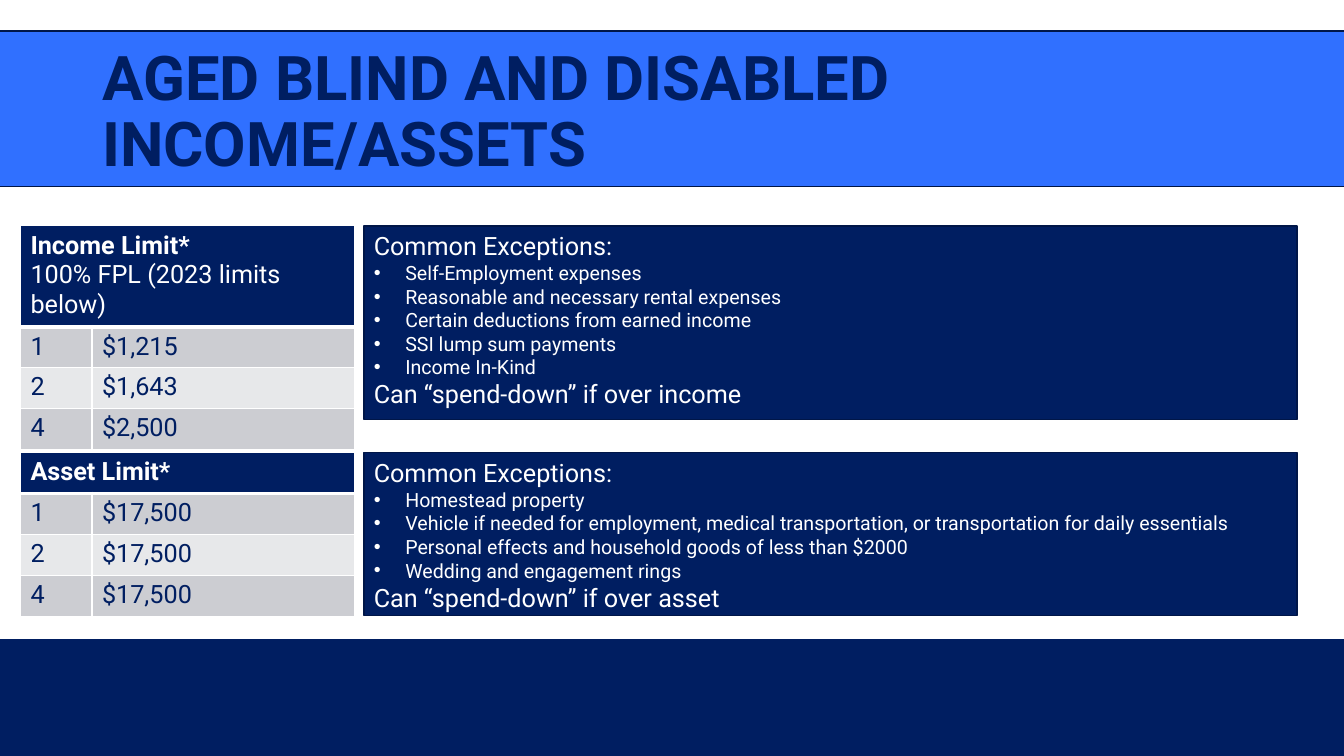
from dataclasses import dataclass
from lxml.etree import SubElement as add_element
from pptx import Presentation
from pptx.dml.color import RGBColor as Color
from pptx.enum.shapes import MSO_SHAPE as Preset
from pptx.enum.text import MSO_ANCHOR as Anchor, PP_ALIGN as Align
from pptx.oxml.ns import qn
from pptx.util import Pt


@dataclass(frozen=True)
class Theme:
    font: str = "Roboto"
    navy: str = "001E61"
    outline: str = "001648"
    blue: str = "3070FF"
    white: str = "FFFFFF"
    bands: tuple = ("CCCDD2", "E7E8EA")
    title: int = 44
    body: int = 18
    bullet: int = 14


class SlideBuilder:
    def __init__(self, page, theme):
        self.page = page
        self.theme = theme

    def add_span(self, para, text, size, color, bold=False):
        span = para.add_run()
        span.text = text
        formats = {"name": self.theme.font, "size": Pt(size), "bold": bold}
        for name, value in formats.items():
            setattr(span.font, name, value)
        span.font.color.rgb = Color.from_string(color)

    def next_para(self, frame, index):
        para = frame.add_paragraph() if index else frame.paragraphs[0]
        para.alignment = Align.LEFT
        return para

    def bar(self, bounds, fill, line=None):
        box = self.page.shapes.add_shape(Preset.RECTANGLE, *map(Pt, bounds))
        box.shadow.inherit = False
        box.fill.solid()
        box.fill.fore_color.rgb = Color.from_string(fill)
        if line:
            box.line.color.rgb = Color.from_string(line)
            box.line.width = Pt(1)
        else:
            box.line.fill.background()
        return box

    def title(self, bounds, text):
        frame = self.page.shapes.add_textbox(*map(Pt, bounds)).text_frame
        formats = {"word_wrap": True, "vertical_anchor": Anchor.MIDDLE}
        for name, value in formats.items():
            setattr(frame, name, value)
        para = self.next_para(frame, 0)
        para.line_spacing = 0.9
        self.add_span(para, text, self.theme.title, self.theme.navy, True)

    def panel(self, bounds, heading, bullets, closing):
        theme = self.theme
        frame = self.bar(bounds, theme.navy, theme.outline).text_frame
        formats = {"word_wrap": True, "vertical_anchor": Anchor.TOP}
        for name, value in formats.items():
            setattr(frame, name, value)
        for index, text in enumerate([heading, *bullets, closing]):
            para = self.next_para(frame, index)
            is_bullet = 0 < index <= len(bullets)
            if is_bullet:
                properties = para._p.get_or_add_pPr()
                properties.set("marL", str(Pt(22.5)))
                properties.set("indent", str(Pt(-22.5)))
                add_element(properties, qn("a:buFont"), typeface="Arial")
                add_element(properties, qn("a:buChar"), char="•")
            size = theme.bullet if is_bullet else theme.body
            self.add_span(para, text, size, theme.white)

    def style_cell(self, cell, fill, top=1, bottom=1):
        cell.fill.solid()
        cell.fill.fore_color.rgb = Color.from_string(fill)
        properties = cell._tc.get_or_add_tcPr()
        sides = {"lnL": 1, "lnR": 1, "lnT": top, "lnB": bottom}
        for place, (side, width) in enumerate(sides.items()):
            border = add_element(properties, qn(f"a:{side}"), w=str(Pt(width)))
            paint = add_element(border, qn("a:solidFill"))
            add_element(paint, qn("a:srgbClr"), val=self.theme.white)
            properties.insert(place, border)

    def limit_table(self, left, top, widths, heights, header, limits):
        theme = self.theme
        bounds = (left, top, sum(widths), sum(heights))
        table = self.page.shapes.add_table(len(heights), len(widths), *map(Pt, bounds)).table
        for name in ("first_row", "horz_banding"):
            setattr(table, name, False)
        for column, width in zip(table.columns, widths):
            column.width = Pt(width)
        for row, height in zip(table.rows, heights):
            row.height = Pt(height)
        for column in range(len(widths)):
            self.style_cell(table.cell(0, column), theme.navy, bottom=3)
        table.cell(0, 0).merge(table.cell(0, len(widths) - 1))
        frame = table.cell(0, 0).text_frame
        for index, text in enumerate(header):
            self.add_span(self.next_para(frame, index), text, theme.body, theme.white, index == 0)
        for row, values in enumerate(limits, 1):
            for column, text in enumerate(values):
                cell = table.cell(row, column)
                self.style_cell(cell, theme.bands[(row - 1) % 2], top=3 if row == 1 else 1)
                para = self.next_para(cell.text_frame, 0)
                self.add_span(para, text, theme.body, theme.navy)


SECTIONS = [
    {
        "top": 161.3, "panel_height": 138.2, "header_height": 70,
        "header": ["Income Limit*", "100% FPL (2023 limits below)"],
        "limits": [("1", "$1,215"), ("2", "$1,643"), ("4", "$2,500")],
        "exceptions": [
            "Self-Employment expenses",
            "Reasonable and necessary rental expenses",
            "Certain deductions from earned income",
            "SSI lump sum payments",
            "Income In-Kind",
        ],
        "closing": "Can “spend-down” if over income",
    },
    {
        "top": 323.3, "panel_height": 116.6, "header_height": 29.2,
        "header": ["Asset Limit*"],
        "limits": [("1", "$17,500"), ("2", "$17,500"), ("4", "$17,500")],
        "exceptions": [
            "Homestead property",
            "Vehicle if needed for employment, medical transportation, "
            "or transportation for daily essentials",
            "Personal effects and household goods of less than $2000",
            "Wedding and engagement rings",
        ],
        "closing": "Can “spend-down” if over asset",
    },
]


def main():
    deck = Presentation()
    deck.slide_width, deck.slide_height = Pt(960), Pt(540)
    theme = Theme()
    builder = SlideBuilder(deck.slides.add_slide(deck.slide_layouts[6]), theme)
    builder.bar((0, 456.5, 960, 83.5), theme.navy)
    builder.bar((-27.4, 22.3, 995.8, 110.9), theme.blue, theme.outline)
    builder.title((66, 28.8, 828, 104.4), "AGED BLIND AND DISABLED INCOME/ASSETS")
    for section in SECTIONS:
        top = section["top"]
        heights = [section["header_height"]] + [29.2] * len(section["limits"])
        builder.limit_table(14.6, top, (51.1, 187.9), heights, section["header"], section["limits"])
        bounds = (259.9, top, 666.7, section["panel_height"])
        builder.panel(bounds, "Common Exceptions:", section["exceptions"], section["closing"])
    deck.save("out.pptx")


if __name__ == "__main__":
    main()
